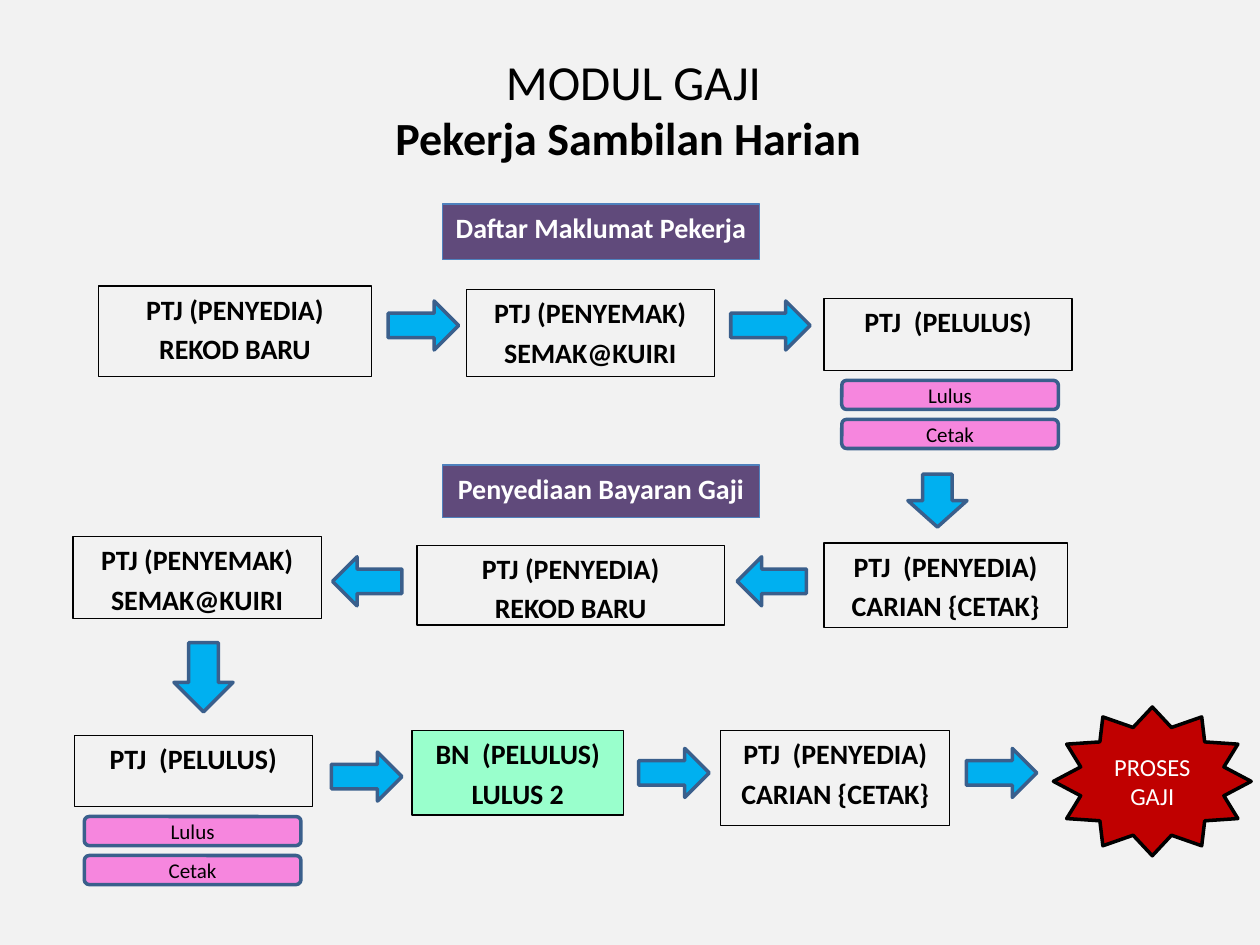
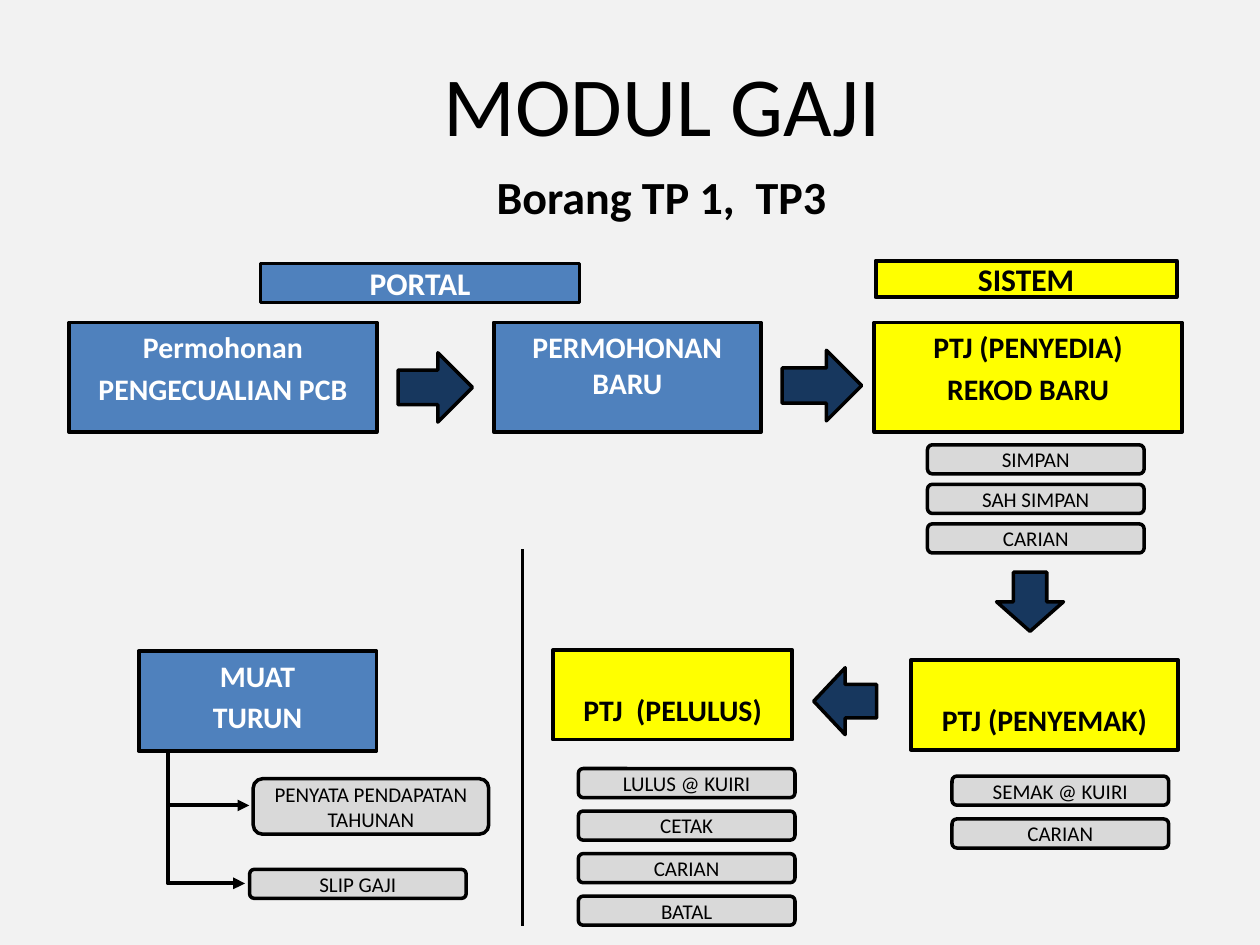
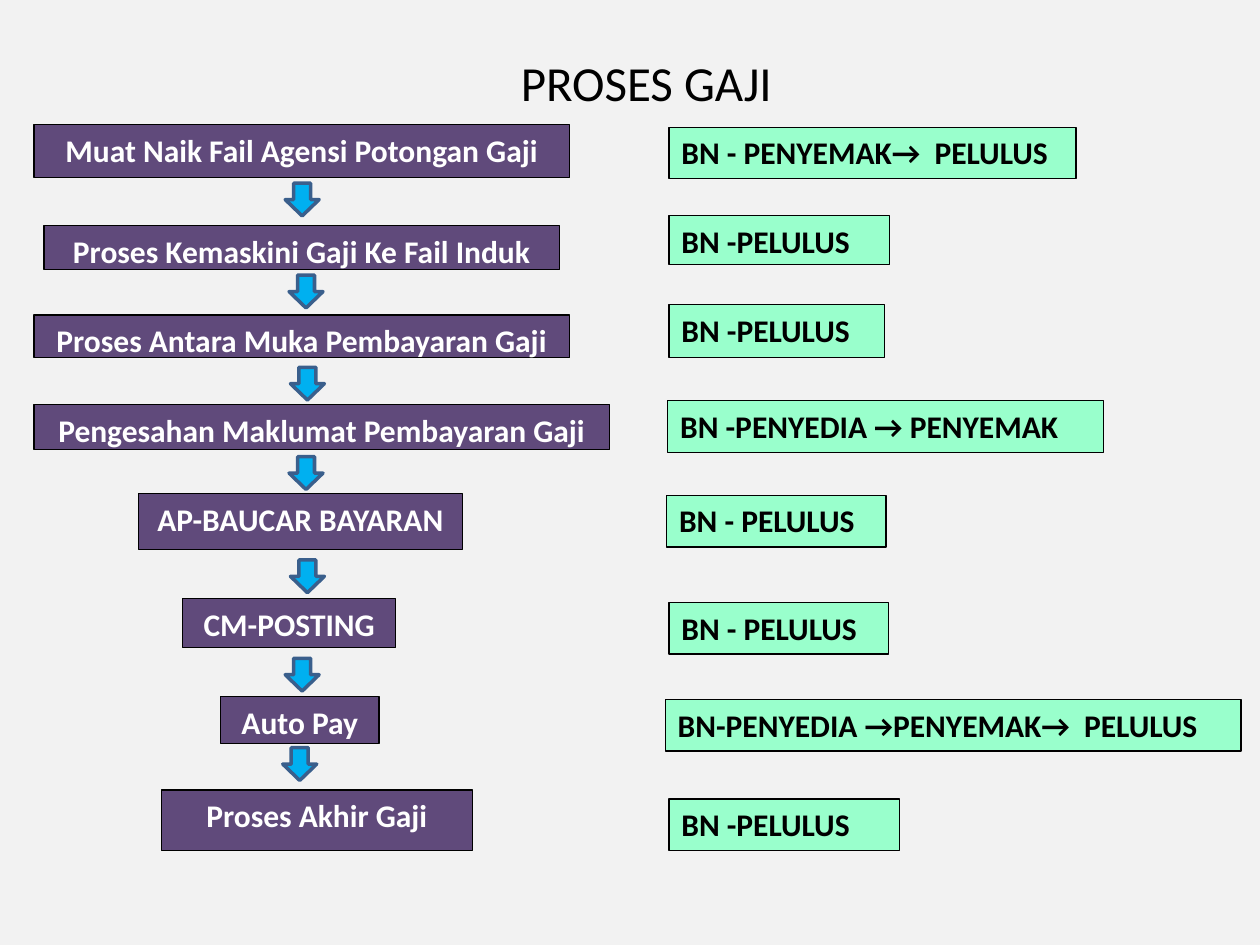
from dataclasses import dataclass, replace
from typing import NamedTuple, Optional

from lxml.etree import SubElement
from pptx import Presentation
from pptx.dml.color import RGBColor
from pptx.enum.shapes import MSO_CONNECTOR as Link, MSO_SHAPE as Kind
from pptx.enum.text import MSO_ANCHOR as Anchor, MSO_AUTO_SIZE as Fit, PP_ALIGN as Align
from pptx.oxml.ns import qn
from pptx.slide import Slide
from pptx.util import Pt

FONT = "Calibri"
BLACK = RGBColor(0x00, 0x00, 0x00)
WHITE = RGBColor(0xFF, 0xFF, 0xFF)
PAPER = RGBColor(0xF2, 0xF2, 0xF2)
PURPLE = RGBColor(0x60, 0x4A, 0x7B)
BLUE = RGBColor(0x4F, 0x81, 0xBD)
NAVY = RGBColor(0x17, 0x37, 0x5E)
SKY = RGBColor(0x00, 0xB0, 0xF0)
STEEL = RGBColor(0x3A, 0x5F, 0x8C)
PINK = RGBColor(0xF6, 0x86, 0xDE)
MINT = RGBColor(0x99, 0xFF, 0xCC)
RED = RGBColor(0xC0, 0x00, 0x00)
YELLOW = RGBColor(0xFF, 0xFF, 0x00)
GREY = RGBColor(0xD9, 0xD9, 0xD9)

RIGHT, LEFT, DOWN = Kind.RIGHT_ARROW, Kind.LEFT_ARROW, Kind.DOWN_ARROW
PILL_W, PILL_H = 123.8, 16.6


@dataclass(frozen=True)
class Style:
    fill: Optional[RGBColor] = None
    line: RGBColor = BLACK
    width: float = 0.75
    size: float = 16
    color: RGBColor = BLACK
    bold: bool = True
    middle: bool = False
    align: Align = Align.CENTER
    pitch: float = 1.0
    kind: Kind = Kind.RECTANGLE


class Item(NamedTuple):
    x: float
    y: float
    w: float
    h: float
    text: str
    style: Style


class Arrow(NamedTuple):
    kind: Kind
    x: float
    y: float
    w: float
    h: float


PLAIN = Style()
BAND = Style(PURPLE, BLUE, color=WHITE)
BANK = Style(MINT)
PINK_PILL = Style(PINK, STEEL, 2, 12, bold=False, middle=True, kind=Kind.ROUNDED_RECTANGLE)
GREY_PILL = replace(PINK_PILL, fill=GREY, line=BLACK)
STAR = Style(RED, width=2, size=14, color=WHITE, bold=False, middle=True, kind=Kind.STAR_12_POINT)
SKY_ARROW = Style(SKY, STEEL, 2)
NAVY_ARROW = Style(NAVY, BLACK, 2)
OFFICE = Style(YELLOW, width=2.25, size=17)
TALL = replace(OFFICE, pitch=2.0)
WEB = replace(OFFICE, fill=BLUE, color=WHITE)
OFFICE_TAG = replace(OFFICE, size=18, middle=True)
WEB_TAG = replace(WEB, size=18, middle=True, width=2)
STEP = Style(PURPLE, size=18, color=WHITE)
ROLE = Style(MINT, size=18, align=Align.LEFT)


def write(frame, text: str, style: Style) -> None:
    frame.text = text
    frame.word_wrap = True
    frame.auto_size = Fit.NONE
    frame.vertical_anchor = Anchor.MIDDLE if style.middle else Anchor.TOP
    for para in frame.paragraphs:
        para.alignment = style.align
        para.line_spacing = style.pitch
        para.space_before = Pt(0 if style.middle else style.size / 5)
        for run in para.runs:
            font = run.font
            font.name, font.size, font.bold = FONT, Pt(style.size), style.bold
            font.color.rgb = style.color


def draw(slide: Slide, item: Item) -> None:
    style = item.style
    shape = slide.shapes.add_shape(style.kind, *map(Pt, item[:4]))
    shape.shadow.inherit = False
    if style.fill is None:
        shape.fill.background()
    else:
        shape.fill.solid()
        shape.fill.fore_color.rgb = style.fill
    shape.line.color.rgb = style.line
    shape.line.width = Pt(style.width)
    if item.text:
        write(shape.text_frame, item.text, style)


def point(slide: Slide, arrows: list[Arrow], style: Style) -> None:
    """Draw block arrows in one style."""
    for kind, *box in arrows:
        draw(slide, Item(*box, "", replace(style, kind=kind)))


def stack(slide: Slide, x: float, y: float, step: float, names: list[str], style: Style) -> None:
    """Draw pills under each other, one every step points."""
    for i, name in enumerate(names):
        draw(slide, Item(x, y + i * step, PILL_W, PILL_H, name, style))


def join(slide: Slide, kind: Link, ends: tuple[float, ...], width: float) -> None:
    """Draw a black line; an elbow goes down first and ends in an arrowhead."""
    line = slide.shapes.add_connector(kind, *map(Pt, ends))
    line.line.color.rgb = BLACK
    line.line.width = Pt(width)
    props = line._element.spPr
    if kind == Link.ELBOW:
        SubElement(props.find(qn("a:ln")), qn("a:tailEnd"), type="triangle")
        guides = props.find(qn("a:prstGeom")).get_or_add_avLst()
        SubElement(guides, qn("a:gd"), name="adj1", fmla="val 0")
    SubElement(props, qn("a:effectLst"))


def start(prs, text: str, box: tuple[float, ...], size: float = 28) -> Slide:
    """Add a slide with its title."""
    slide = prs.slides.add_slide(prs.slide_layouts[5])
    title = slide.shapes.title
    title.left, title.top, title.width, title.height = map(Pt, box)
    write(title.text_frame, text, Style(size=size, bold=False))
    title.text_frame.paragraphs[0].space_before = Pt(0)
    return slide


def subtitle(slide: Slide, text: str, x: float, y: float) -> None:
    box = slide.shapes.add_textbox(Pt(x), Pt(y), Pt(612), Pt(40))
    write(box.text_frame, text, Style(size=26.3, middle=True))


def daily(prs) -> None:
    slide = start(prs, "MODUL GAJI", (226, 26, 272, 41))
    subtitle(slide, "Pekerja Sambilan Harian", 53, 58.5)
    maker, check = "PTJ (PENYEDIA)\nREKOD BARU", "PTJ (PENYEMAK)\nSEMAK@KUIRI"
    passer, search = "PTJ  (PELULUS)", "PTJ  (PENYEDIA)\nCARIAN {CETAK}"
    for item in (
        Item(252.7, 116.6, 181.4, 31.7, "Daftar Maklumat Pekerja", BAND),
        Item(56.2, 163.4, 156.2, 51.8, maker, PLAIN),
        Item(266.4, 165.6, 141.8, 49.7, check, PLAIN),
        Item(470.9, 170.6, 141.8, 41, passer, PLAIN),
        Item(252.7, 265.7, 181.4, 30.2, "Penyediaan Bayaran Gaji", BAND),
        Item(470.9, 310.3, 139, 48.2, search, PLAIN),
        Item(238.3, 311.8, 175.7, 45.4, maker, PLAIN),
        Item(41.8, 306.7, 141.8, 46.8, check, PLAIN),
        Item(42.5, 420.5, 136, 40.3, passer, PLAIN),
        Item(235.4, 417.6, 121, 48.2, "BN  (PELULUS)\nLULUS 2", BANK),
        Item(411.8, 417.6, 131, 54, search, PLAIN),
        Item(602, 404, 113, 85, "PROSES GAJI", STAR),
    ):
        draw(slide, item)
    point(slide, [
        Arrow(RIGHT, 221.8, 172, 40.3, 28),
        Arrow(RIGHT, 417.6, 172, 45.4, 28),
        Arrow(DOWN, 518.8, 271, 33.8, 30.2),
        Arrow(LEFT, 421.2, 318.2, 39.6, 28),
        Arrow(LEFT, 190, 318.2, 39.6, 28),
        Arrow(DOWN, 99.4, 367.2, 33.8, 39.6),
        Arrow(RIGHT, 189.4, 429.8, 40.3, 28),
        Arrow(RIGHT, 365, 427.7, 40.3, 28),
        Arrow(RIGHT, 552.2, 427.7, 40.3, 28),
    ], SKY_ARROW)
    for x, y in ((481, 217.4), (48.2, 466.6)):
        stack(slide, x, y, 22.3, ["Lulus", "Cetak"], PINK_PILL)


def forms(prs) -> None:
    slide = start(prs, "MODUL GAJI", (171.4, 26.6, 414, 65.5), 48)
    subtitle(slide, "Borang TP 1,  TP3", 72, 92)
    for item in (
        Item(149, 150.5, 182.2, 22.3, "PORTAL", WEB_TAG),
        Item(500.4, 149, 172, 20.9, "SISTEM", OFFICE_TAG),
        Item(39.6, 184.3, 175.7, 62.6, "Permohonan\nPENGECUALIAN PCB", WEB),
        Item(282.2, 184.3, 152.6, 62.6, "PERMOHONAN BARU", WEB),
        Item(499.7, 184.3, 175.7, 62.6, "PTJ (PENYEDIA)\nREKOD BARU", OFFICE),
        Item(520.6, 377.3, 152.6, 51.1, "PTJ (PENYEMAK)", TALL),
        Item(316, 371.5, 136.8, 51.1, "PTJ  (PELULUS)", TALL),
        Item(79.2, 372.2, 136, 56.9, "MUAT\nTURUN", WEB),
        Item(144.7, 445, 134.6, 31.7, "PENYATA PENDAPATAN TAHUNAN", GREY_PILL),
    ):
        draw(slide, item)
    point(slide, [
        Arrow(RIGHT, 227.5, 201.6, 42.5, 39.6),
        Arrow(RIGHT, 447, 200.2, 45.4, 40.3),
        Arrow(DOWN, 569.5, 327, 38.2, 33.8),
        Arrow(LEFT, 465, 381.6, 36, 38.2),
    ], NAVY_ARROW)
    stack(slide, 530, 254.2, 22.6, ["SIMPAN", "SAH SIMPAN", "CARIAN"], GREY_PILL)
    stack(slide, 544, 443.5, 24.5, ["SEMAK @ KUIRI", "CARIAN"], GREY_PILL)
    stack(slide, 330.5, 439.2, 24.3, ["LULUS @ KUIRI", "CETAK", "CARIAN", "BATAL"], GREY_PILL)
    stack(slide, 142.6, 496.8, 0, ["SLIP GAJI"], GREY_PILL)
    join(slide, Link.STRAIGHT, (298.4, 314, 298.4, 529), 1.75)
    join(slide, Link.ELBOW, (95.8, 429.8, 142.5, 460.3), 2.25)
    join(slide, Link.ELBOW, (95.8, 457.2, 140, 504.8), 2.25)


def process(prs) -> None:
    slide = start(prs, "PROSES GAJI", (233.3, 26.6, 272, 41))
    for item in (
        Item(19.4, 71.3, 306, 30.2, "Muat Naik Fail Agensi Potongan Gaji", STEP),
        Item(25.2, 128.9, 294.5, 25.2, "Proses Kemaskini Gaji Ke Fail Induk", STEP),
        Item(19.4, 180, 306, 24.5, "Proses Antara Muka Pembayaran Gaji", STEP),
        Item(19.4, 231.1, 329, 25.9, "Pengesahan Maklumat Pembayaran Gaji", STEP),
        Item(79.2, 282.2, 185, 31.7, "AP-BAUCAR BAYARAN", STEP),
        Item(104.4, 342, 121.7, 28.1, "CM-POSTING", STEP),
        Item(126, 398.2, 90.7, 26.6, "Auto Pay", STEP),
        Item(92.2, 451.4, 177.8, 34.6, "Proses Akhir Gaji", STEP),
        Item(382.3, 72.7, 232.6, 29.5, "BN - PENYEMAK→  PELULUS", ROLE),
        Item(382.3, 123.1, 126, 28.1, "BN -PELULUS", ROLE),
        Item(382.3, 174.2, 123.1, 30.2, "BN -PELULUS", ROLE),
        Item(381.6, 229, 249.1, 29.5, "BN -PENYEDIA → PENYEMAK", ROLE),
        Item(381, 283, 125.3, 29.5, "BN - PELULUS", ROLE),
        Item(382.3, 344.2, 125.3, 29.5, "BN - PELULUS", ROLE),
        Item(380.2, 399.6, 329, 29.5, "BN-PENYEDIA →PENYEMAK→  PELULUS", ROLE),
        Item(382.3, 456.5, 131.8, 29.5, "BN -PELULUS", ROLE),
    ):
        draw(slide, item)
    spots = ((163, 104.7), (165.2, 157.3), (166, 209.9), (165.2, 261),
             (166, 320), (163, 376.2), (161.6, 427.3))
    point(slide, [Arrow(DOWN, x, y, 19.4, 18.7) for x, y in spots], SKY_ARROW)


def main() -> None:
    prs = Presentation()
    prs.slide_width, prs.slide_height = Pt(720), Pt(540)
    paper = prs.slide_master.background.fill
    paper.solid()
    paper.fore_color.rgb = PAPER
    for build in (daily, forms, process):
        build(prs)
    prs.save("out.pptx")


if __name__ == "__main__":
    main()
